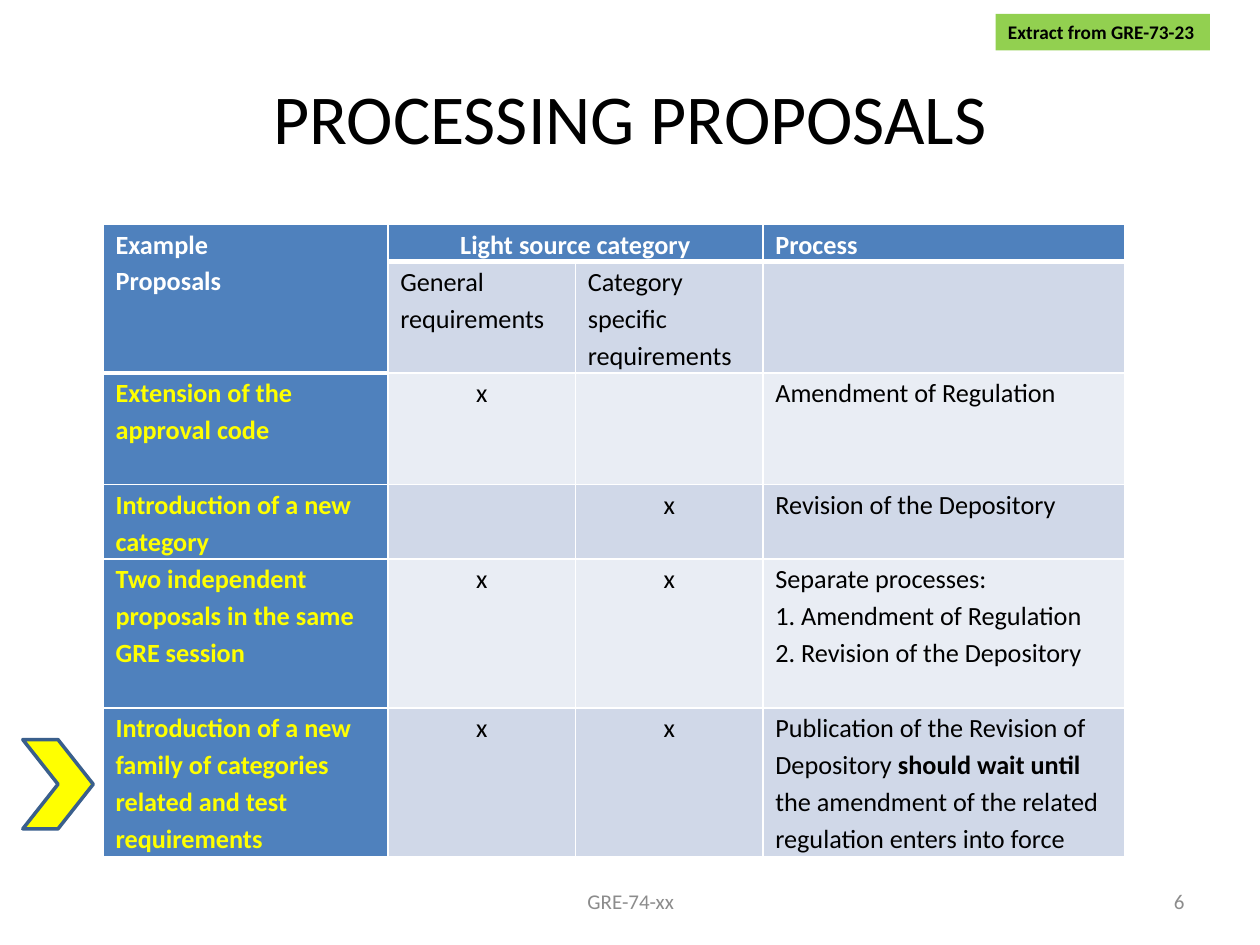
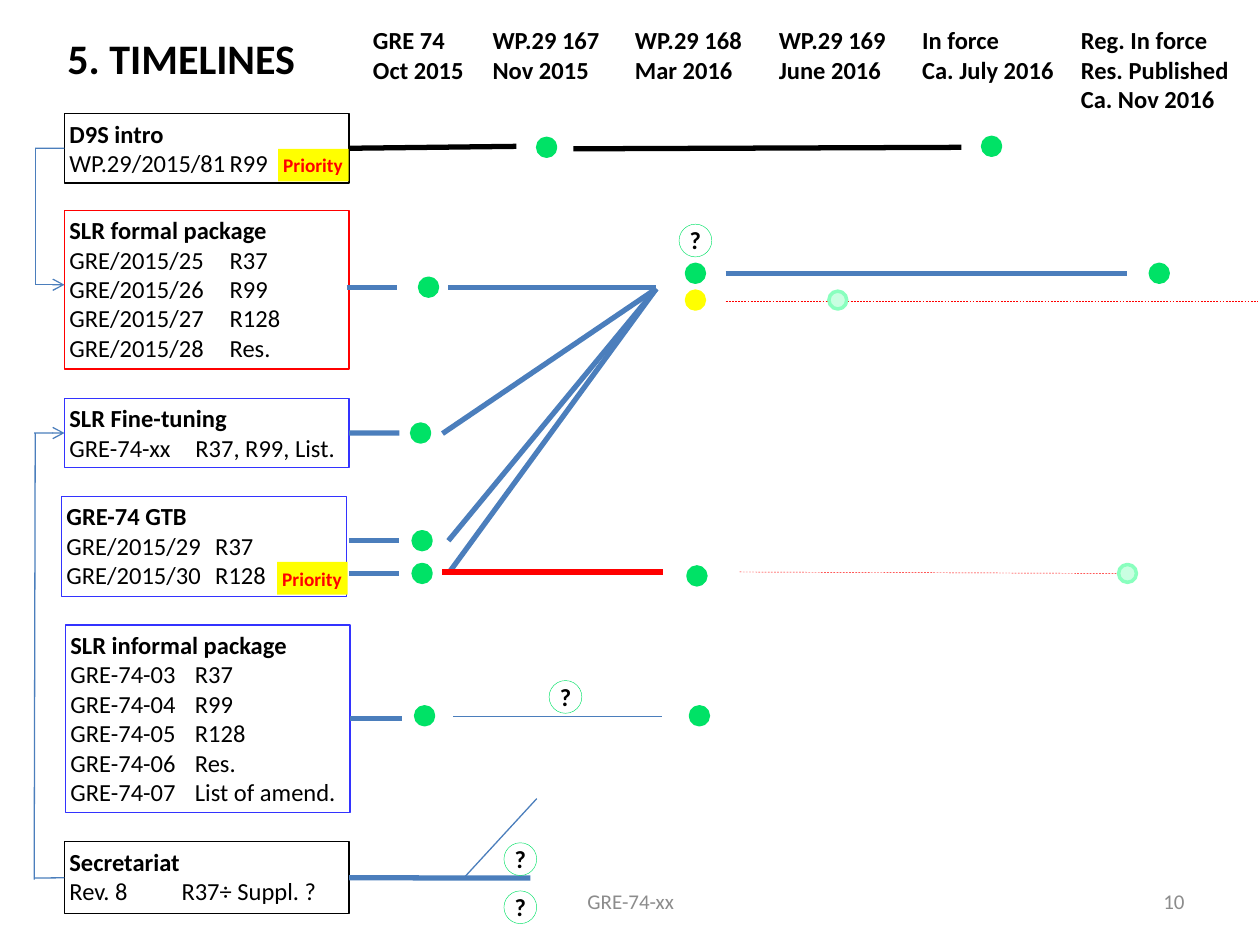
from lxml.etree import SubElement
from pptx import Presentation
from pptx.dml.color import RGBColor
from pptx.enum.dml import MSO_LINE
from pptx.enum.shapes import MSO_CONNECTOR, MSO_SHAPE as SHAPE
from pptx.enum.text import MSO_ANCHOR as ANCHOR, PP_ALIGN as ALIGN
from pptx.oxml.ns import qn
from pptx.util import Cm, Pt

FONT = "Calibri"
BLACK, WHITE, RED, YELLOW = "000000", "FFFFFF", "FF0000", "FFFF00"
BLUE, NAVY, VIOLET, GREY = "4B7EBC", "3A5F8C", "3333FF", "8C8C8C"
GREEN, PALE_GREEN, PALE_EDGE, LIME = "00E266", "C9FFE1", "89FFBE", "92D050"
HEAD_FILL, BANDS = "4F81BD", ("E9EDF4", "D0D8E8")
LEFT, RIGHT = 1, 3


def rgb(color):
    return RGBColor.from_string(color)


class Deck:
    def __init__(self):
        self.prs = Presentation()
        self.prs.slide_width, self.prs.slide_height = Cm(25.4), Cm(19.05)
        self.s = None

    def slide(self, title, at, number, size, bold=False):
        self.s = self.prs.slides.add_slide(self.prs.slide_layouts[5])
        sp = self.s.shapes.title
        sp.left, sp.top, sp.width, sp.height = map(Cm, at)
        sp.text_frame.vertical_anchor = ANCHOR.MIDDLE
        self.set_text(sp.text_frame, [title], size, bold=bold, align=ALIGN.CENTER)
        for text, x, w, align in (("GRE-74-xx", 8.69, 8.05, ALIGN.CENTER),
                                  (str(number), 18.21, 5.92, ALIGN.RIGHT)):
            self.text([text], (x, 17.65, w, 1.02), 12, GREY, align=align,
                      inset=0.25, anchor=ANCHOR.MIDDLE)

    def set_text(self, tf, lines, size, color=BLACK, bold=False, align=ALIGN.LEFT,
                 tab=None, spacing=None):
        for i, line in enumerate(lines):
            p = tf.paragraphs[0] if i == 0 else tf.add_paragraph()
            p.alignment = align
            if spacing:
                p.line_spacing = spacing
            if tab:
                tabs = SubElement(p._p.get_or_add_pPr(), qn("a:tabLst"))
                SubElement(tabs, qn("a:tab"), pos=str(Cm(tab)), algn="l")
            p.font.name, p.font.size, p.font.bold = FONT, Pt(size), bold
            p.font.color.rgb = rgb(color)
            for j, piece in enumerate(line.split("*")):
                if piece:
                    r = p.add_run()
                    r.text = piece
                    if j % 2:
                        r.font.bold = not bold

    def frame(self, sp, inset, anchor=ANCHOR.TOP, wrap=True):
        tf = sp.text_frame
        tf.word_wrap, tf.vertical_anchor = wrap, anchor
        tf.margin_left = tf.margin_right = Cm(inset)
        tf.margin_top = tf.margin_bottom = Cm(min(inset, 0.13))
        return tf

    def text(self, lines, at, size, color=BLACK, bold=False, align=ALIGN.LEFT,
             inset=0.1, anchor=ANCHOR.TOP):
        sp = self.s.shapes.add_textbox(*map(Cm, at))
        self.set_text(self.frame(sp, inset, anchor), lines, size, color, bold, align)

    def shape(self, kind, at, fill=None, line=None, width=0.75):
        sp = self.s.shapes.add_shape(kind, *map(Cm, at))
        sp.shadow.inherit = False
        if fill:
            sp.fill.solid()
            sp.fill.fore_color.rgb = rgb(fill)
        else:
            sp.fill.background()
        if line:
            sp.line.color.rgb = rgb(line)
            sp.line.width = Pt(width)
        else:
            sp.line.fill.background()
        return sp

    def tag(self, text, at, fill, color=BLACK, inset=0.1):
        sp = self.shape(SHAPE.RECTANGLE, at, fill)
        self.set_text(self.frame(sp, inset, wrap=False), [text], 11, color, True)

    def box(self, lines, x, y, h, line, tab):
        sp = self.shape(SHAPE.RECTANGLE, (x, y, 5.74, h), line=line)
        self.set_text(self.frame(sp, 0.1), lines, 14, tab=tab)
        return sp

    def dot(self, x, y, fill=GREEN, line=None):
        d = 0.36
        self.shape(SHAPE.OVAL, (x - d / 2, y - d / 2, d, d), fill, line or fill, 2)

    def question(self, x, y):
        self.text(["?"], (x - 0.5, y - 0.41, 1, 0.81), 14, bold=True,
                  align=ALIGN.CENTER)
        self.shape(SHAPE.OVAL, (x - 0.33, y - 0.33, 0.66, 0.66), line=GREEN, width=0.25)

    def line(self, x1, y1, x2, y2, color=BLUE, width=3, dash=False, arrow=False,
             begin=None, end=None):
        cn = self.s.shapes.add_connector(MSO_CONNECTOR.STRAIGHT,
                                         *map(Cm, (x1, y1, x2, y2)))
        if begin:
            cn.begin_connect(*begin)
        if end:
            cn.end_connect(*end)
        cn.line.color.rgb = rgb(color)
        cn.line.width = Pt(width)
        if dash:
            cn.line.dash_style = MSO_LINE.DASH
        if arrow:
            SubElement(cn.line._get_or_add_ln(), qn("a:tailEnd"), type="arrow")
        SubElement(cn._element.spPr, qn("a:effectLst"))

    def borders(self, cell, top, bottom):
        tcPr = cell._tc.get_or_add_tcPr()
        for side, width in (("L", 1), ("R", 1), ("T", top), ("B", bottom)):
            ln = SubElement(tcPr, qn("a:ln" + side), w=str(Pt(width)))
            SubElement(SubElement(ln, qn("a:solidFill")), qn("a:srgbClr"), val=WHITE)

    def table(self, rows, at, widths, heights):
        table = self.s.shapes.add_table(len(rows), len(widths), *map(Cm, at),
                                        Cm(sum(widths)), Cm(sum(heights))).table
        table.first_row = table.horz_banding = False
        for col, w in zip(table.columns, widths):
            col.width = Cm(w)
        for row, h in zip(table.rows, heights):
            row.height = Cm(h)
        heavy = {(0, c) for c in range(len(widths))} | {(1, 0)}
        for r, row in enumerate(rows):
            for c, text in enumerate(row):
                cell = table.cell(r, c)
                cell.margin_left = cell.margin_right = Cm(0.25)
                cell.margin_top = cell.margin_bottom = 0
                self.borders(cell, 3 if (r - 1, c) in heavy else 1,
                             3 if (r, c) in heavy else 1)
                head = r == 0 or c == 0
                cell.fill.solid()
                cell.fill.fore_color.rgb = rgb(HEAD_FILL if head else BANDS[r % 2])
                if text:
                    color = WHITE if r == 0 else YELLOW if c == 0 else BLACK
                    centred = text == "x" or (r, c) == (0, 1)
                    self.set_text(cell.text_frame, text.split("\n"), 15, color, head,
                                  ALIGN.CENTER if centred else ALIGN.LEFT, spacing=1.15)
        table.cell(0, 0).merge(table.cell(1, 0))
        table.cell(0, 1).merge(table.cell(0, 2))


def proposals(deck):
    deck.slide("PROCESSING PROPOSALS", (1.27, 0.76, 22.86, 3.18), 6, 40)
    deck.table([
        ["Example\nProposals", "Light source category", "", "Process"],
        ["", "General requirements", "Category specific requirements", ""],
        ["Extension of the approval code", "x", "", "Amendment of Regulation"],
        ["Introduction of a new category", "", "x", "Revision of the Depository"],
        ["Two independent proposals in the same GRE session", "x", "x",
         "Separate processes:\n1. Amendment of Regulation\n2. Revision of the Depository"],
        ["Introduction of a new family of categories related and test requirements",
         "x", "x", "Publication of the Revision of Depository *should wait until* "
         "the amendment of the related regulation enters into force"],
    ], (2.08, 4.52), (5.74, 3.78, 3.78, 7.29), (0.75, 2.25, 2.25, 1.5, 3, 3))
    deck.tag("Extract from GRE-73-23", (20.07, 0.28, 4.32, 0.74), LIME, inset=0.25)
    deck.shape(SHAPE.CHEVRON, (0.46, 14.91, 1.42, 1.8), YELLOW, NAVY, 2)


def timelines(deck):
    deck.slide("5. TIMELINES", (0.99, 0.41, 5.33, 1.5), 10, 24, True)
    for x, w, *lines in (
            (7.42, 2.18, "GRE 74", "Oct 2015"),
            (9.83, 2.69, "WP.29 167", "Nov 2015"),
            (12.7, 2.69, "WP.29 168", "Mar 2016"),
            (15.6, 2.69, "WP.29 169", "June 2016"),
            (18.49, 3, "In force", "Ca. July 2016"),
            (21.69, 3.43, "Reg. In force", "Res. Published", "Ca. Nov 2016")):
        deck.text(lines, (x, 0.41, w, 0.2 + 0.6 * len(lines)), 14, bold=True)

    intro = deck.box(["*D9S intro*", "WP.29/2015/81\tR99"], 1.3, 2.29, 1.4, BLACK, 3.23)
    deck.box(["*SLR formal package*", "GRE/2015/25\tR37", "GRE/2015/26\tR99",
              "GRE/2015/27\tR128", "GRE/2015/28\tRes."], 1.3, 4.24, 3.2, RED, 3.23)
    tuning = deck.box(["*SLR Fine-tuning*", "GRE-74-xx\tR37, R99, List."],
                      1.3, 8.03, 1.4, VIOLET, 2.54)
    deck.box(["*GRE-74 GTB*", "GRE/2015/29\tR37", "GRE/2015/30\tR128"],
             1.24, 10.01, 2.01, VIOLET, 3)
    informal = deck.box(["*SLR informal package*", "GRE-74-03\tR37", "GRE-74-04\tR99",
                         "GRE-74-05\tR128", "GRE-74-06\tRes.",
                         "GRE-74-07\tList of amend."], 1.32, 12.6, 3.78, VIOLET, 2.51)
    secretariat = deck.box(["*Secretariat*", "Rev. 8\tR37÷ Suppl. ?"],
                           1.3, 16.97, 1.45, BLACK, 2.26)
    for x, y in ((5.61, 3), (5.59, 11.33)):
        deck.tag("Priority", (x, y, 1.42, 0.66), YELLOW, RED)

    deck.line(7.04, 2.99, 10.41, 2.95, BLACK, begin=(intro, RIGHT))
    deck.line(11.56, 3, 19.38, 2.97, BLACK)
    deck.line(7.04, 8.73, 8.05, 8.73, begin=(tuning, RIGHT))
    deck.line(7.06, 14.49, 8.1, 14.49, begin=(informal, RIGHT))
    deck.line(7.04, 17.7, 10.69, 17.7, begin=(secretariat, RIGHT))
    for x1, x2, y in ((6.99, 8, 5.79), (7.04, 8.05, 10.9), (7.04, 8.05, 11.56),
                      (9.04, 13.23, 5.79), (14.63, 22.71, 5.51)):
        deck.line(x1, y, x2, y)
    for x, y in ((8.92, 8.74), (9.04, 10.9), (9.04, 11.56)):
        deck.line(x, y, 13.23, 5.82)
    deck.line(8.92, 11.53, 13.36, 11.53, RED)
    deck.line(14.91, 11.53, 22.56, 11.56, RED, 0.25, dash=True)
    deck.line(14.63, 6.07, 25.35, 6.07, RED, 0.25, dash=True)
    deck.line(9.14, 14.43, 13.34, 14.43, width=0.25)
    deck.line(9.32, 17.73, 10.82, 16.1, width=0.75)

    deck.line(0.71, 2.99, 1.3, 2.99, width=0.75, end=(intro, LEFT))
    deck.line(0.71, 5.74, 0.71, 2.99, width=0.75)
    deck.line(0.71, 5.74, 1.3, 5.74, width=0.75, arrow=True)
    deck.line(0.69, 17.7, 1.3, 17.7, width=0.75, end=(secretariat, LEFT))
    deck.line(0.69, 17.73, 0.71, 8.73, width=0.75)
    deck.line(0.69, 8.73, 1.3, 8.73, width=0.75, arrow=True, end=(tuning, LEFT))

    for x, y in ((11.02, 2.97), (19.99, 2.95), (8.64, 5.79), (14.02, 5.51),
                 (23.37, 5.51), (8.48, 8.73), (8.51, 10.9), (8.51, 11.56),
                 (14.05, 11.61), (8.56, 14.43), (14.1, 14.43)):
        deck.dot(x, y)
    deck.dot(14.02, 6.05, YELLOW)
    for x, y in ((16.89, 6.05), (22.73, 11.56)):
        deck.dot(x, y, PALE_GREEN, PALE_EDGE)
    for x, y in ((14.02, 4.85), (11.4, 14.05), (10.49, 17.32), (10.49, 18.29)):
        deck.question(x, y)


def main():
    deck = Deck()
    proposals(deck)
    timelines(deck)
    deck.prs.save("out.pptx")


if __name__ == "__main__":
    main()
